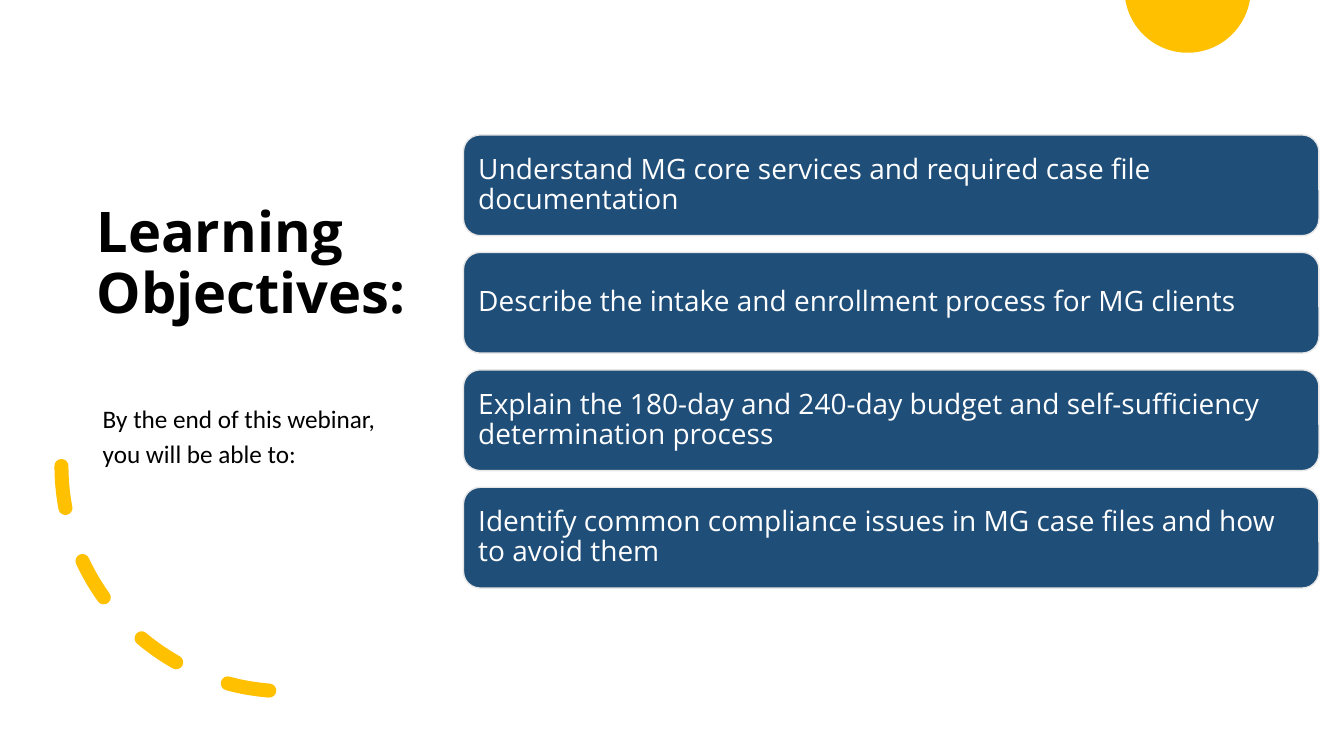
import math

import lxml.etree
import pptx
import pptx.dml.color
import pptx.enum.shapes
import pptx.enum.text
import pptx.oxml.ns
import pptx.util
from pptx.util import Cm

GOLD = "FFC000"
NAVY = "1F4E79"
PALE_GREY = "E7E6E6"
WHITE = "FFFFFF"
BLACK = "000000"

OBJECTIVES = [
    "Understand MG core services and required case file documentation",
    "Describe the intake and enrollment process for MG clients",
    "Explain the 180-day and 240-day budget and self-sufficiency determination process",
    "Identify common compliance issues in MG case files and how to avoid them",
]


def color(hex_string):
    return pptx.dml.color.RGBColor.from_string(hex_string)


def write_text(shape, text, font, size, hex_color, anchor, bold=False, space_after=0):
    frame = shape.text_frame
    frame.text = text
    frame.word_wrap = True
    frame.auto_size = pptx.enum.text.MSO_AUTO_SIZE.NONE
    frame.vertical_anchor = anchor
    for para in frame.paragraphs:
        para.alignment = pptx.enum.text.PP_ALIGN.LEFT
        para.line_spacing = 0.9
        para.space_before = pptx.util.Pt(0)
        para.space_after = pptx.util.Pt(space_after)
        for span in para.runs:
            span.font.name = font
            span.font.size = pptx.util.Pt(size)
            span.font.bold = bold
            span.font.color.rgb = color(hex_color)


def place_title(page):
    title = page.shapes.title
    title.left, title.top, title.width, title.height = Cm(2.18), Cm(4.68), Cm(9.2), Cm(4)
    write_text(title, "Learning\nObjectives:", "Open Sans", 40, BLACK,
               pptx.enum.text.MSO_ANCHOR.MIDDLE, bold=True)


def add_lead_in(page):
    box = page.shapes.add_textbox(Cm(2.18), Cm(10.12), Cm(9.2), Cm(2.1))
    box.text_frame.margin_left = Cm(0.41)
    write_text(box, "By the end of this webinar,\nyou will be able to:", "Calibri", 18, BLACK,
               pptx.enum.text.MSO_ANCHOR.TOP, space_after=6)


def add_half_sun(page, center_x, center_y, radius):
    start = math.asin(-center_y / radius)
    steps = 60
    angles = [start + (math.pi - 2 * start) * step / steps for step in range(steps + 1)]
    points = [(Cm(center_x + radius * math.cos(angle)), Cm(center_y + radius * math.sin(angle)))
              for angle in angles]
    builder = page.shapes.build_freeform(*points[0])
    builder.add_line_segments(points[1:], close=True)
    sun = builder.convert_to_shape()
    sun.shadow.inherit = False
    sun.fill.solid()
    sun.fill.fore_color.rgb = color(GOLD)
    sun.line.fill.background()


def add_dashed_arc(page, left, top, size):
    arc = page.shapes.add_shape(pptx.enum.shapes.MSO_SHAPE.ARC,
                                Cm(left), Cm(top), Cm(size), Cm(size))
    arc.shadow.inherit = False
    arc.rotation = 90
    arc.fill.background()
    arc.line.color.rgb = color(GOLD)
    arc.line.width = pptx.util.Pt(10)
    arc.line.dash_style = pptx.enum.dml.MSO_LINE.DASH
    properties = arc.element.spPr
    properties.find(pptx.oxml.ns.qn("a:xfrm")).set("flipV", "1")
    outline = properties.find(pptx.oxml.ns.qn("a:ln"))
    outline.set("cap", "rnd")
    lxml.etree.SubElement(outline, pptx.oxml.ns.qn("a:round"))


def add_objective(page, text, top):
    card = page.shapes.add_shape(pptx.enum.shapes.MSO_SHAPE.ROUNDED_RECTANGLE,
                                 Cm(11.68), Cm(top), Cm(21.56), Cm(2.54))
    card.shadow.inherit = False
    card.fill.solid()
    card.fill.fore_color.rgb = color(NAVY)
    card.line.color.rgb = color(PALE_GREY)
    card.line.width = pptx.util.Pt(1)
    write_text(card, text, "Open Sans", 20, WHITE, pptx.enum.text.MSO_ANCHOR.MIDDLE)


def main():
    deck = pptx.Presentation()
    deck.slide_width, deck.slide_height = Cm(33.87), Cm(19.05)
    page = deck.slides.add_slide(deck.slide_layouts.get_by_name("Title Only"))
    add_half_sun(page, center_x=29.93, center_y=-0.26, radius=1.59)
    place_title(page)
    add_lead_in(page)
    add_dashed_arc(page, left=1.55, top=6.07, size=11.35)
    for index, objective in enumerate(OBJECTIVES):
        add_objective(page, objective, top=3.4 + 2.96 * index)
    deck.save("out.pptx")


if __name__ == "__main__":
    main()
